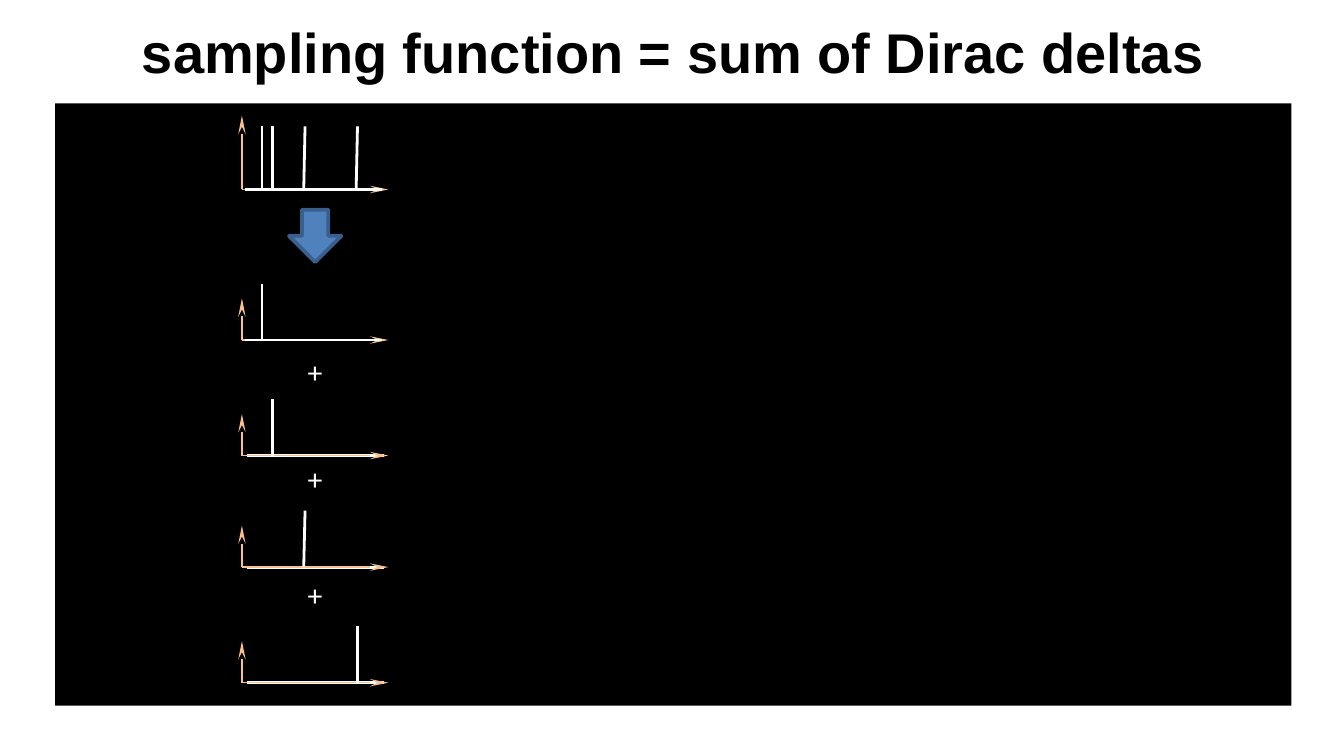
from lxml import etree
from pptx import Presentation
from pptx.dml.color import RGBColor
from pptx.enum import shapes, text
from pptx.oxml.ns import qn
from pptx.util import Inches, Pt

TITLE = "sampling function = sum of Dirac deltas"
COLORS = {"panel": "000000", "title": "000000", "axis": "FAC090",
          "signal": "FFFFFF", "arrow": "4F81BD", "edge": "3A5F8C"}

# Baseline, axis height, spike height, spikes (top x, foot x), base line start
# and whether the base line lies above the axis.
PLOTS = [
    (1.41, 0.55, 0.47, [(1.95, 1.95), (2.27, 2.26), (2.03, 2.03), (2.66, 2.65)],
     1.82, True),
    (2.53, 0.31, 0.42, [(1.95, 1.95)], 1.82, True),
    (3.39, 0.31, 0.42, [(2.03, 2.03)], 1.84, False),
    (4.22, 0.31, 0.42, [(2.27, 2.26)], 1.84, False),
    (5.08, 0.31, 0.42, [(2.66, 2.66)], 1.84, False),
]
PLUS_TOPS = [2.58, 3.38, 4.24]
LEFT, RIGHT, BASE = 1.8, 2.89, 1.02


def color(name):
    return RGBColor.from_string(COLORS[name])


def add_block(slide, kind, box, fill, edge=None):
    shape = slide.shapes.add_shape(kind, *map(Inches, box))
    shape.shadow.inherit = False
    shape.fill.solid()
    shape.fill.fore_color.rgb = color(fill)
    if edge:
        shape.line.color.rgb = color(edge)
        shape.line.width = Pt(2)
    else:
        shape.line.fill.background()


def add_text(slide, box, words, font, size, name, bold=False):
    frame = slide.shapes.add_textbox(*map(Inches, box)).text_frame
    run = frame.paragraphs[0].add_run()
    run.text = words
    run.font.name, run.font.size, run.font.bold = font, Pt(size), bold
    run.font.color.rgb = color(name)
    return frame


def add_line(group, start, end, name, width, head=False):
    line = group.shapes.add_connector(
        shapes.MSO_CONNECTOR.STRAIGHT, *map(Inches, start + end))
    line.line.color.rgb = color(name)
    line.line.width = Pt(width)
    if head:
        etree.SubElement(line.line._get_or_add_ln(), qn("a:tailEnd"),
                         type="stealth", w="sm", len="lg")
    etree.SubElement(line._element.spPr, qn("a:effectLst"))


def add_plot(slide, base, rise, spike, marks, start, above):
    group = slide.shapes.add_group_shape()
    add_line(group, (LEFT, base), (LEFT, base - rise), "axis", 0.75, True)
    axis = ((LEFT, base), (RIGHT, base), "axis", 0.75, True)
    floor = ((start, base), (start + BASE, base), "signal", 1.5)
    for part in (axis, floor) if above else (floor, axis):
        add_line(group, *part)
    for top, foot in marks:
        add_line(group, (top, base - spike), (foot, base), "signal", 1.5)


def main():
    deck = Presentation()
    deck.slide_width = Inches(10)
    deck.slide_height = deck.slide_width * 9 // 16
    slide = deck.slides.add_slide(deck.slide_layouts[6])

    add_block(slide, shapes.MSO_SHAPE.RECTANGLE, (0.41, 0.77, 9.2, 4.48), "panel")
    frame = add_text(slide, (0.56, 0.04, 8.9, 0.68), TITLE, "Arial", 30, "title", True)
    frame.word_wrap = True
    frame.vertical_anchor = text.MSO_ANCHOR.MIDDLE
    frame.margin_left = frame.margin_right = Inches(0.09)
    frame.margin_top = frame.margin_bottom = Inches(0.04)
    frame.paragraphs[0].alignment = text.PP_ALIGN.CENTER

    add_block(slide, shapes.MSO_SHAPE.DOWN_ARROW, (2.15, 1.56, 0.39, 0.39),
              "arrow", "edge")
    for plot in PLOTS:
        add_plot(slide, *plot)
    for top in PLUS_TOPS:
        frame = add_text(slide, (2.19, top, 0.31, 0.37), "+", "Calibri", 16, "signal")
        frame.word_wrap = False
        frame.auto_size = text.MSO_AUTO_SIZE.SHAPE_TO_FIT_TEXT

    deck.save("out.pptx")


if __name__ == "__main__":
    main()
